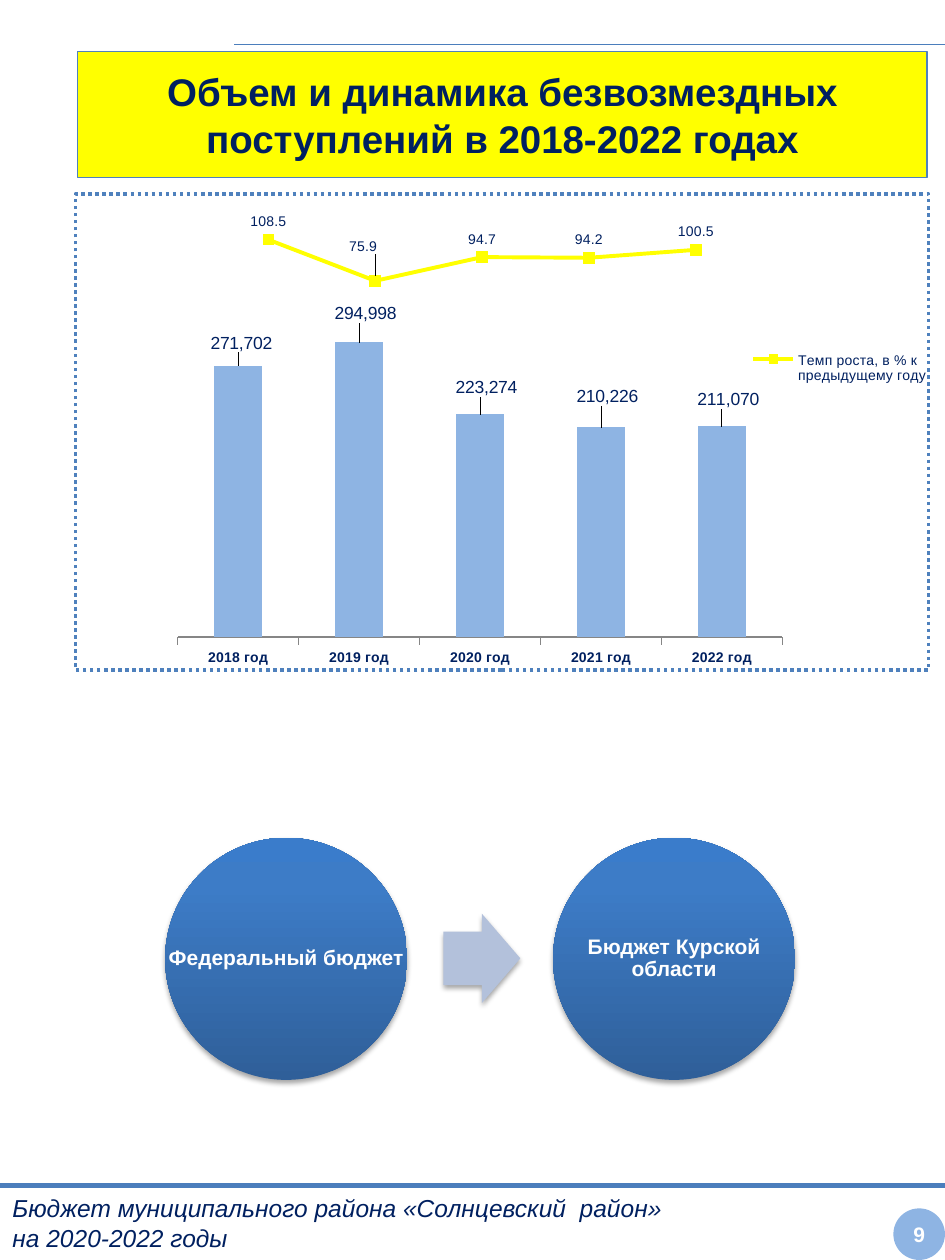
from pptx import Presentation
from pptx.chart.data import CategoryChartData
from pptx.dml.color import RGBColor
from pptx.enum.chart import XL_CHART_TYPE, XL_LABEL_POSITION, XL_LEGEND_POSITION
from pptx.enum.chart import XL_MARKER_STYLE, XL_TICK_LABEL_POSITION, XL_TICK_MARK
from pptx.enum.dml import MSO_LINE
from pptx.enum.shapes import MSO_CONNECTOR, MSO_SHAPE
from pptx.enum.text import MSO_ANCHOR, PP_ALIGN
from pptx.oxml import parse_xml
from pptx.oxml.ns import nsdecls, qn
from pptx.util import Cm, Pt

OVAL, RECTANGLE, ARROW = MSO_SHAPE.OVAL, MSO_SHAPE.RECTANGLE, MSO_SHAPE.RIGHT_ARROW
LEFT, CENTER = PP_ALIGN.LEFT, PP_ALIGN.CENTER
COLUMNS, LINE = XL_CHART_TYPE.COLUMN_CLUSTERED, XL_CHART_TYPE.LINE_MARKERS
OUTSIDE, ABOVE = XL_LABEL_POSITION.OUTSIDE_END, XL_LABEL_POSITION.ABOVE

FONT = "Arial"
COLORS = {name: RGBColor.from_string(value) for name, value in {
    "navy": "002060", "yellow": "FFFF00", "white": "FFFFFF", "border": "4F81BD",
    "rule": "4B7EBC", "light blue": "8EB4E3", "arrow": "B3C1DB", "axis": "868686",
}.items()}
GRADIENT = [(0, "2F5F99"), (80, "3D7CC7"), (100, "3A7CCB")]


def write(shape, lines, size, color, align=CENTER, bold=True, italic=False, inset=0.25):
    frame = shape.text_frame
    frame.word_wrap = True
    frame.vertical_anchor = MSO_ANCHOR.MIDDLE
    frame.margin_left = frame.margin_right = Cm(inset)
    frame.margin_top = frame.margin_bottom = Cm(min(inset, 0.13))
    frame.text = "\n".join(lines)
    for paragraph in frame.paragraphs:
        paragraph.alignment = align
        font = paragraph.font
        font.name, font.size, font.bold, font.italic = FONT, Pt(size), bold, italic
        font.color.rgb = COLORS[color]


def set_layout(parent, index, x, y, size=None, inner=False):
    """Place a chart part by fractions; without a size, x and y are offsets."""
    for old in parent.findall(qn("c:layout")):
        parent.remove(old)
    items = [("layoutTarget", "inner")] if inner else []
    if size:
        items += [("xMode", "edge"), ("yMode", "edge")]
    items += [("x", x), ("y", y)]
    if size:
        items += [("w", size[0]), ("h", size[1])]
    body = "".join(f'<c:{tag} val="{value}"/>' for tag, value in items)
    parent.insert(index, parse_xml(
        f'<c:layout {nsdecls("c")}><c:manualLayout>{body}</c:manualLayout></c:layout>'))


presentation = Presentation()
presentation.slide_width, presentation.slide_height = Cm(19.05), Cm(25.4)
slide = presentation.slides.add_slide(presentation.slide_layouts[6])
shapes = slide.shapes

# Title
title = shapes.add_shape(RECTANGLE, Cm(1.57), Cm(1.04), Cm(17.12), Cm(2.54))
title.shadow.inherit = False
title.fill.solid()
title.fill.fore_color.rgb = COLORS["yellow"]
title.line.color.rgb = COLORS["border"]
title.line.width = Pt(0.75)
write(title, ["Объем и динамика безвозмездных поступлений в 2018-2022 годах"], 22, "navy")

# Footer text and page number
footer = shapes.add_textbox(Cm(0), Cm(23.9), Cm(19.05), Cm(1.5))
write(footer, ["Бюджет муниципального района «Солнцевский  район»", "на 2020-2022 годы"],
      14, "navy", LEFT, bold=False, italic=True)
page_number = shapes.add_shape(OVAL, Cm(18.01), Cm(24.36), Cm(1.04), Cm(1.04))
page_number.shadow.inherit = False
page_number.fill.solid()
page_number.fill.fore_color.rgb = COLORS["light blue"]
page_number.line.fill.background()
write(page_number, ["9"], 12, "white", inset=0.1)

# Rules above the title and the footer
for left, top, width in [(4.72, 0.89, 0.75), (0, 23.9, 3)]:
    rule = shapes.add_connector(MSO_CONNECTOR.STRAIGHT, Cm(left), Cm(top), Cm(19.05), Cm(top))
    rule.line.color.rgb = COLORS["rule"]
    rule.line.width = Pt(width)
    rule._element.spPr.append(parse_xml(f'<a:effectLst {nsdecls("a")}/>'))

# Dotted frame around the charts
frame_box = shapes.add_shape(RECTANGLE, Cm(1.52), Cm(3.91), Cm(17.2), Cm(9.6))
frame_box.shadow.inherit = False
frame_box.fill.solid()
frame_box.fill.fore_color.rgb = COLORS["white"]
frame_box.line.color.rgb = COLORS["border"]
frame_box.line.width = Pt(2)
frame_box.line.dash_style = MSO_LINE.ROUND_DOT

# Charts: kind, place, categories, series, format, axis maximum, plot area,
# label size and position, label offsets by point
charts = [
    (COLUMNS, (3.33, 5.64, 12.7, 7.92), [f"{year} год" for year in range(2018, 2023)],
     "Series 1", [271702, 294998, 223274, 210226, 211070], "#,##0", 350000,
     (0.02, 0.02, (0.96, 0.89)), 10, OUTSIDE,
     {0: (0.005, -0.02), 1: (0.01, -0.035), 2: (0.01, -0.03),
      3: (0.01, -0.04), 4: (0.01, -0.03)}),
    (LINE, (3.94, 3.71, 15.11, 4.72), ["1", "2", "3", "4", "5"],
     "Темп роста, в % к предыдущему году", [108.5, 75.9, 94.7, 94.2, 100.5], "#,##0.0", 120,
     (0.026, 0.176, (0.713, 0.647)), 8, ABOVE, {1: (-0.016, -0.07)}),
]
for (kind, place, categories, name, values, number_format, maximum,
     plot_area, label_size, position, offsets) in charts:
    data = CategoryChartData(number_format=number_format)
    data.categories = categories
    data.add_series(name, values)
    chart = shapes.add_chart(kind, *[Cm(length) for length in place], data).chart
    chart.has_title = False
    chart.has_legend = kind == LINE
    chart.font.name, chart.font.size = FONT, Pt(12)
    set_layout(chart._chartSpace.chart.plotArea, 0, *plot_area, inner=True)
    value_axis = chart.value_axis
    value_axis.visible = value_axis.has_major_gridlines = False
    value_axis.minimum_scale, value_axis.maximum_scale = 0, maximum

    plot = chart.plots[0]
    plot.vary_by_categories = False
    series = plot.series[0]
    labels = series.data_labels
    labels.show_value = True
    labels.number_format, labels.number_format_is_linked = number_format, False
    labels.position = position
    labels.font.size = Pt(label_size)
    labels.font.color.rgb = COLORS["navy"]
    for index, offset in offsets.items():
        label = series.points[index].data_label
        label.position = position
        label.font.size = Pt(label_size)
        label.font.color.rgb = COLORS["navy"]
        set_layout(series._element.dLbls.findall(qn("c:dLbl"))[index if kind == COLUMNS else 0],
                   1, *offset)

    axis = chart.category_axis
    if kind == COLUMNS:
        plot.gap_width = 150
        series.format.fill.solid()
        series.format.fill.fore_color.rgb = COLORS["light blue"]
        axis.major_tick_mark = XL_TICK_MARK.OUTSIDE
        axis.tick_label_position = XL_TICK_LABEL_POSITION.LOW
        axis.format.line.color.rgb = COLORS["axis"]
        font = axis.tick_labels.font
        font.size, font.bold = Pt(8), True
        font.color.rgb = COLORS["navy"]
    else:
        axis.visible = False
        series.smooth = False
        series.format.line.color.rgb = COLORS["yellow"]
        series.format.line.width = Pt(2.25)
        marker = series.marker
        marker.style, marker.size = XL_MARKER_STYLE.SQUARE, 6
        marker.format.fill.solid()
        marker.format.fill.fore_color.rgb = COLORS["yellow"]
        marker.format.line.color.rgb = COLORS["yellow"]
        legend = chart.legend
        legend.position = XL_LEGEND_POSITION.RIGHT
        legend.include_in_layout = False
        legend.font.size = Pt(8)
        legend.font.color.rgb = COLORS["navy"]
        set_layout(legend._element, 1, 0.74, 0.66, (0.24, 0.25))

# Budget levels: two circles joined by an arrow
for kind, left, top, width, height, caption in [
    (OVAL, 3.33, 16.89, 4.88, 4.88, "Федеральный бюджет"),
    (ARROW, 8.94, 18.42, 1.55, 1.8, None),
    (OVAL, 11.15, 16.89, 4.88, 4.88, "Бюджет Курской области"),
]:
    box = Cm(left), Cm(top), Cm(width), Cm(height)
    shape = shapes.add_shape(kind, *box)
    shape.line.fill.background()
    shape.shadow.inherit = False
    properties = shape._element.spPr
    properties.find(qn("a:effectLst")).append(parse_xml(
        f'<a:outerShdw {nsdecls("a")} blurRad="{Pt(3.1)}" dist="{Pt(1.8)}" dir="5400000" '
        'rotWithShape="0"><a:srgbClr val="000000"><a:alpha val="35000"/></a:srgbClr>'
        '</a:outerShdw>'))
    if kind == ARROW:
        shape.adjustments[0], shape.adjustments[1] = 0.6, 0.5
        shape.fill.solid()
        shape.fill.fore_color.rgb = COLORS["arrow"]
        continue
    shape.fill.gradient()
    shape.fill.gradient_angle = 90
    stops = properties.find(qn("a:gradFill")).find(qn("a:gsLst"))
    for stop in list(stops):
        stops.remove(stop)
    for percent, color in GRADIENT:
        stops.append(parse_xml(f'<a:gs {nsdecls("a")} pos="{percent * 1000}">'
                               f'<a:srgbClr val="{color}"/></a:gs>'))
    text = shapes.add_textbox(*box)
    write(text, [caption], 12, "white", inset=0.05)
    text.text_frame.paragraphs[0].line_spacing = 0.9

presentation.save("out.pptx")
